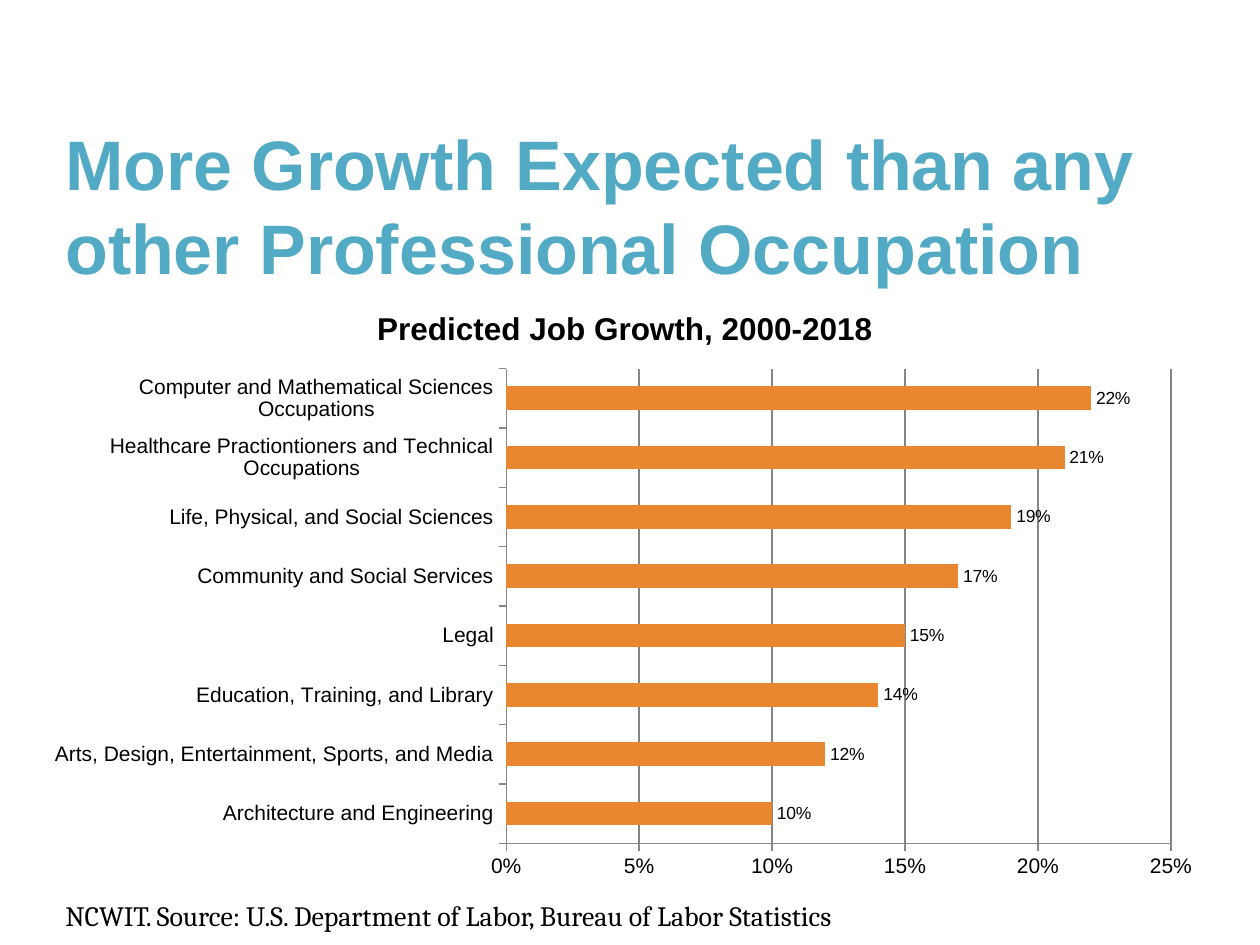
from lxml import etree
from pptx import Presentation
from pptx.chart.data import CategoryChartData
from pptx.dml.color import RGBColor
from pptx.enum.chart import XL_CHART_TYPE, XL_LABEL_POSITION, XL_TICK_MARK
from pptx.enum.text import MSO_ANCHOR
from pptx.util import Inches, Pt

BAR_CLUSTERED = XL_CHART_TYPE.BAR_CLUSTERED
OUTSIDE_END = XL_LABEL_POSITION.OUTSIDE_END
TICK_OUTSIDE = XL_TICK_MARK.OUTSIDE
TICK_NONE = XL_TICK_MARK.NONE
MIDDLE = MSO_ANCHOR.MIDDLE
TOP = MSO_ANCHOR.TOP
CHART_NAMESPACE = "http://schemas.openxmlformats.org/drawingml/2006/chart"

BLACK, GRAY, TEAL, ORANGE = "000000", "868686", "52AAC4", "E88730"
JOB_GROWTH = {
    "Architecture and Engineering": 0.10,
    "Arts, Design, Entertainment, Sports, and Media": 0.12,
    "Education, Training, and Library": 0.14,
    "Legal": 0.15,
    "Community and Social Services": 0.17,
    "Life, Physical, and Social Sciences": 0.19,
    "Healthcare Practiontioners and Technical Occupations": 0.21,
    "Computer and Mathematical Sciences Occupations": 0.22,
}


def color(hex_string):
    """Return the colour for a hex string."""
    return RGBColor.from_string(hex_string)


def style_font(font, size, hex_string, name="Arial", bold=False):
    """Set the face, size, colour and weight of a font."""
    font.name = name
    font.size = Pt(size)
    font.bold = bold
    font.color.rgb = color(hex_string)


def add_text(slide, box, text, size, hex_string, name, bold=False, anchor=TOP):
    """Place one wrapped paragraph of text in a box."""
    shape = slide.shapes.add_textbox(*map(Inches, box))
    frame = shape.text_frame
    frame.word_wrap = True
    frame.vertical_anchor = anchor
    run = frame.paragraphs[0].add_run()
    run.text = text
    style_font(run.font, size, hex_string, name, bold)


def set_plot_layout(chart, **fractions):
    """Fix the inner plot area as fractions of the chart."""
    plot_area = chart._chartSpace.chart.plotArea
    layout = etree.Element(f"{{{CHART_NAMESPACE}}}layout")
    manual = etree.SubElement(layout, f"{{{CHART_NAMESPACE}}}manualLayout")
    settings = {"layoutTarget": "inner", "xMode": "edge", "yMode": "edge", **fractions}
    for tag, value in settings.items():
        etree.SubElement(manual, f"{{{CHART_NAMESPACE}}}{tag}", val=str(value))
    plot_area.insert(0, layout)


def style_axis(axis):
    """Give an axis gray lines, outside ticks and black labels."""
    axis.major_tick_mark = TICK_OUTSIDE
    axis.minor_tick_mark = TICK_NONE
    axis.format.line.color.rgb = color(GRAY)
    axis.format.line.width = Pt(0.75)
    style_font(axis.tick_labels.font, 12, BLACK)


def add_growth_chart(slide, box):
    """Place the bar chart of job growth by occupation in a box."""
    data = CategoryChartData(number_format="0%")
    data.categories = list(JOB_GROWTH)
    data.add_series("Series 1", list(JOB_GROWTH.values()))
    chart = slide.shapes.add_chart(BAR_CLUSTERED, *map(Inches, box), data).chart
    style_font(chart.font, 10, BLACK)
    chart.has_legend = False
    chart.has_title = True
    run = chart.chart_title.text_frame.paragraphs[0].add_run()
    run.text = "Predicted Job Growth, 2000-2018"
    style_font(run.font, 18, BLACK, bold=True)
    set_plot_layout(chart, x=0.4, y=0.14, w=0.56, h=0.78)

    style_axis(chart.category_axis)
    value_axis = chart.value_axis
    style_axis(value_axis)
    value_axis.minimum_scale, value_axis.maximum_scale = 0, 0.25
    value_axis.major_unit = 0.05
    value_axis.tick_labels.number_format = "0%"
    value_axis.tick_labels.number_format_is_linked = False
    value_axis.has_major_gridlines = True
    value_axis.major_gridlines.format.line.color.rgb = color(GRAY)
    value_axis.major_gridlines.format.line.width = Pt(0.75)

    plot = chart.plots[0]
    plot.gap_width = 150
    plot.vary_by_categories = False
    fill = plot.series[0].format.fill
    fill.solid()
    fill.fore_color.rgb = color(ORANGE)
    plot.has_data_labels = True
    labels = plot.data_labels
    labels.show_value = True
    labels.number_format = "0%"
    labels.number_format_is_linked = False
    labels.position = OUTSIDE_END
    style_font(labels.font, 10, BLACK)


def main():
    """Build and save the slide."""
    presentation = Presentation()
    presentation.slide_width = Inches(10)
    presentation.slide_height = Inches(7.5)
    slide = presentation.slides.add_slide(presentation.slide_layouts[6])
    add_text(slide, (0.42, 0.83, 9.08, 1.58),
             "More Growth Expected than any other Professional Occupation",
             40, TEAL, "Arial", bold=True, anchor=MIDDLE)
    add_growth_chart(slide, (0.25, 2.25, 9.42, 4.83))
    add_text(slide, (0.42, 7.08, 7, 0.37),
             "NCWIT. Source: U.S. Department of Labor, Bureau of Labor Statistics",
             16, BLACK, "Cambria")
    presentation.save("out.pptx")


if __name__ == "__main__":
    main()
